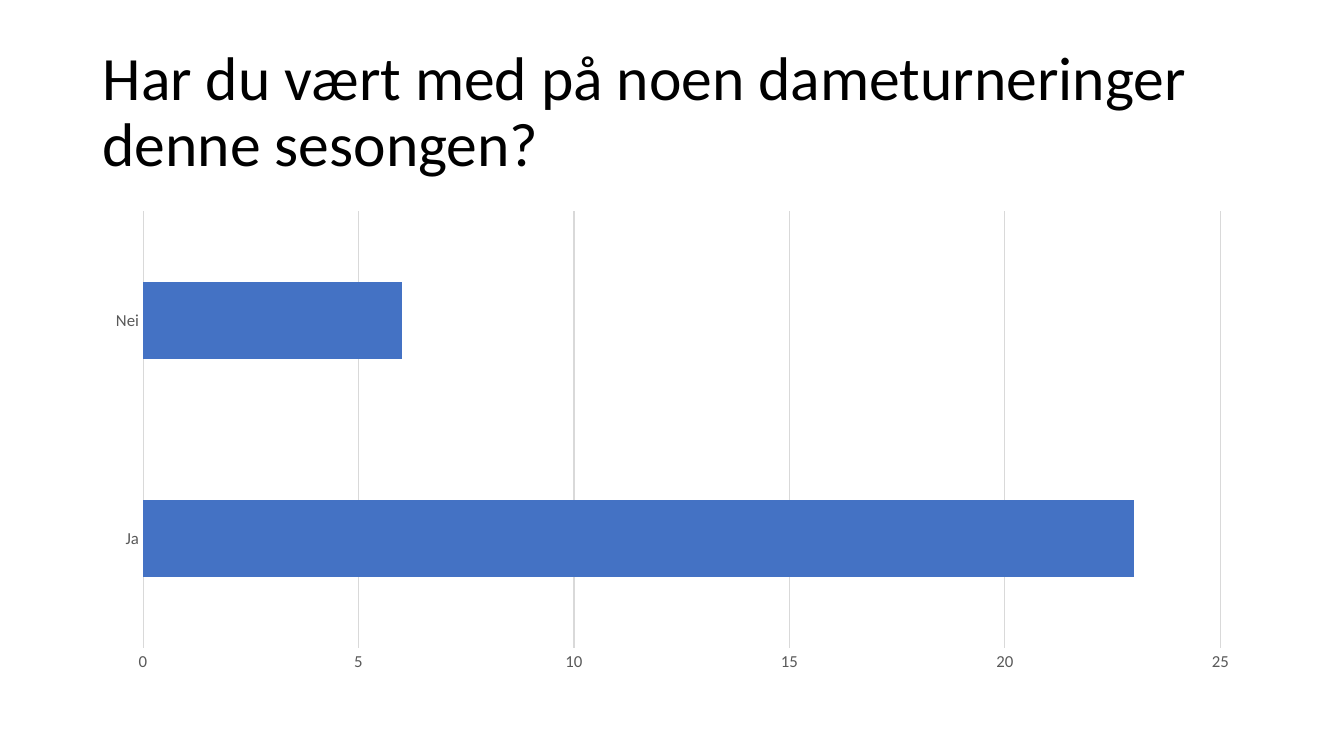
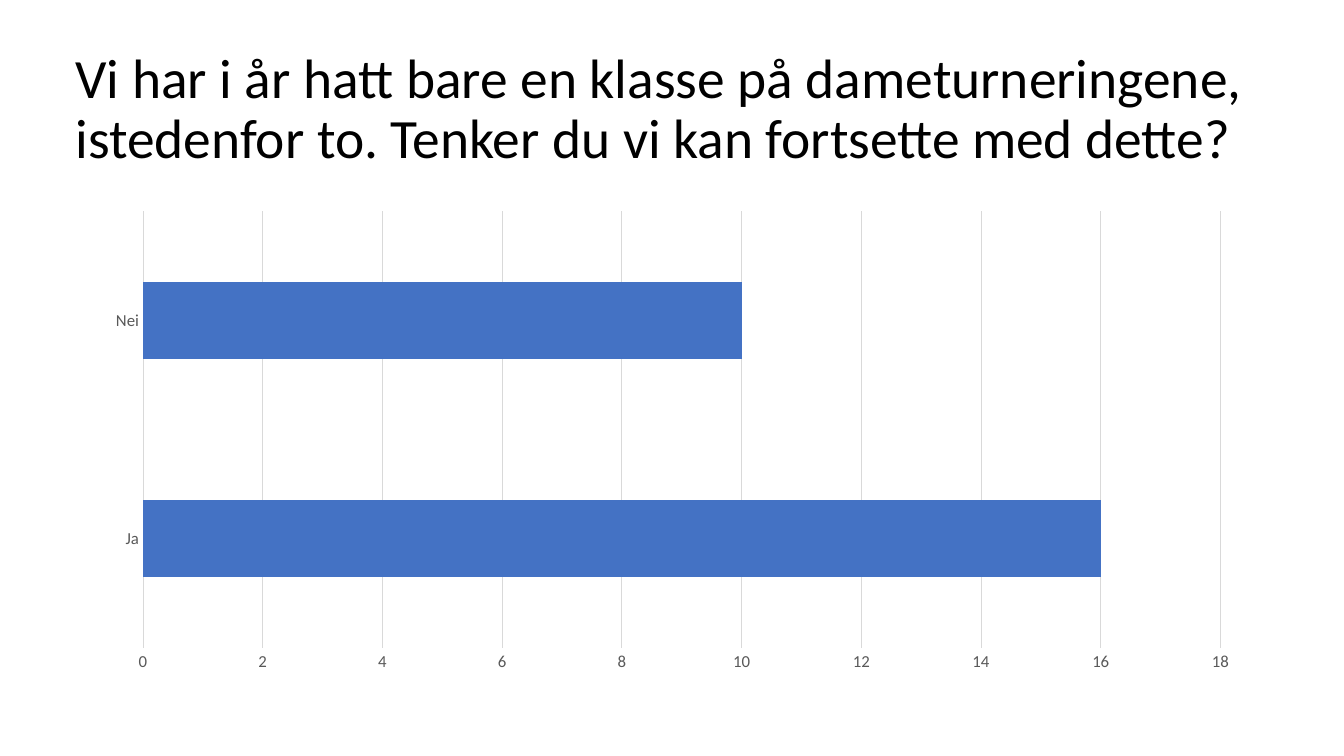
from dataclasses import dataclass

from pptx import Presentation
from pptx.chart.data import CategoryChartData
from pptx.dml.color import RGBColor
from pptx.enum.chart import XL_CHART_TYPE, XL_TICK_MARK
from pptx.enum.text import MSO_ANCHOR
from pptx.util import Pt

BAR = XL_CHART_TYPE.BAR_CLUSTERED
NO_TICK = XL_TICK_MARK.NONE
MIDDLE = MSO_ANCHOR.MIDDLE
PX = 9144  # EMU per px, 100 px to the inch


@dataclass(frozen=True)
class Theme:
    font: str = "Calibri"
    ink: str = "000000"
    label: str = "595959"
    grid: str = "D9D9D9"
    bar: str = "4472C4"
    title_size: float = 44
    label_size: float = 12
    grid_width: float = 0.75
    bar_gap: int = 182


def lengths(*values):
    return [value * PX for value in values]


def apply(target, formats):
    for name, value in formats.items():
        setattr(target, name, value)


class SurveyDeck:
    """Holds the theme and the current page."""

    def __init__(self, theme):
        self.theme = theme
        self.deck = Presentation()
        self.deck.slide_width, self.deck.slide_height = lengths(1333, 750)
        self.page = None

    def add_page(self):
        self.page = self.deck.slides.add_slide(self.deck.slide_layouts[6])

    def style_font(self, font, size, color):
        apply(font, {"name": self.theme.font, "size": Pt(size), "bold": False})
        font.color.rgb = RGBColor.from_string(color)

    def style_line(self, line):
        line.color.rgb = RGBColor.from_string(self.theme.grid)
        line.width = Pt(self.theme.grid_width)

    def title(self, text, place, size):
        box = self.page.shapes.add_textbox(*lengths(*place))
        apply(box.text_frame, {"word_wrap": True, "vertical_anchor": MIDDLE})
        para = box.text_frame.paragraphs[0]
        para.line_spacing = 0.9
        span = para.add_run()
        span.text = text
        self.style_font(span.font, size, self.theme.ink)

    def bar_chart(self, answers, place, top, step):
        data = CategoryChartData()
        data.categories = list(answers)
        data.add_series("Series 1", list(answers.values()))
        frame = self.page.shapes.add_chart(BAR, *lengths(*place), data)
        chart = frame.chart
        apply(chart, {"has_legend": False, "has_title": False})
        self.style_font(chart.font, self.theme.label_size, self.theme.label)

        # Bars
        plot = chart.plots[0]
        apply(plot, {"gap_width": self.theme.bar_gap, "vary_by_categories": False})
        fill = plot.series[0].format.fill
        fill.solid()
        fill.fore_color.rgb = RGBColor.from_string(self.theme.bar)

        # Axes and gridlines
        for axis in (chart.category_axis, chart.value_axis):
            apply(axis, {"major_tick_mark": NO_TICK, "minor_tick_mark": NO_TICK})
            self.style_font(axis.tick_labels.font, self.theme.label_size, self.theme.label)
        self.style_line(chart.category_axis.format.line)
        scale = {"minimum_scale": 0, "maximum_scale": top, "major_unit": step}
        apply(chart.value_axis, scale)
        chart.value_axis.format.line.fill.background()
        self.style_line(chart.value_axis.major_gridlines.format.line)


def main():
    theme = Theme()
    survey = SurveyDeck(theme)
    chart_place = (92, 200, 1150, 476)
    questions = [
        {
            "title": ("Har du vært med på noen dameturneringer denne sesongen?",
                      (92, 40, 1150, 145), theme.title_size),
            "answers": {"Ja": 23, "Nei": 6}, "top": 25, "step": 5,
        },
        {
            "title": ("Vi har i år hatt bare en klasse på dameturneringene, "
                      "istedenfor to. Tenker du vi kan fortsette med dette?",
                      (65, 37, 1204, 145), theme.title_size * 0.9),
            "answers": {"Ja": 16, "Nei": 10}, "top": 18, "step": 2,
        },
    ]
    for question in questions:
        survey.add_page()
        survey.title(*question["title"])
        survey.bar_chart(question["answers"], chart_place,
                         question["top"], question["step"])
    survey.deck.save("out.pptx")


if __name__ == "__main__":
    main()
